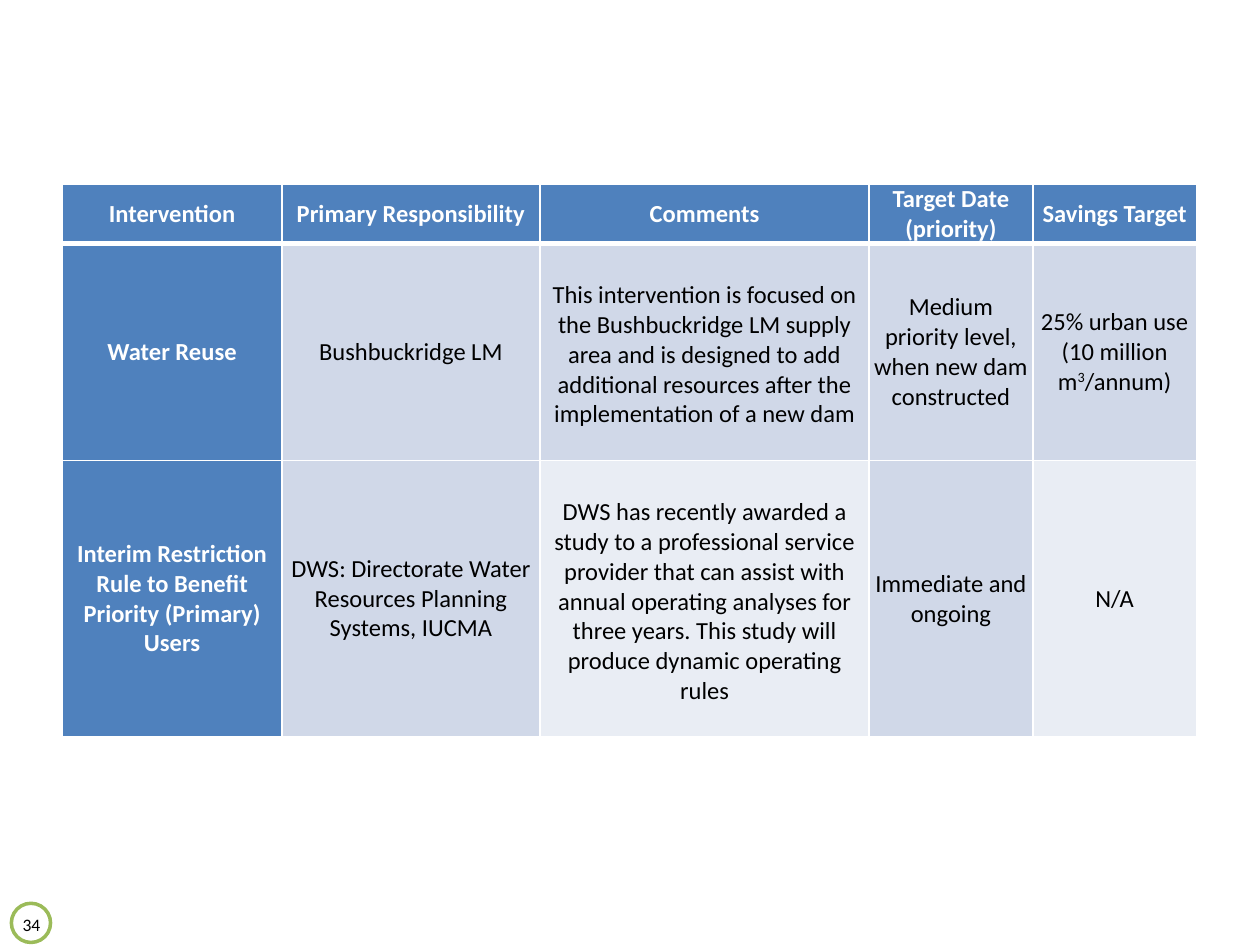
from lxml.etree import SubElement
from pptx import Presentation
from pptx.dml.color import RGBColor
from pptx.enum.shapes import MSO_SHAPE
from pptx.enum.text import MSO_ANCHOR, PP_ALIGN
from pptx.oxml.ns import qn
from pptx.util import Cm, Pt

COLORS = {
    "white": "FFFFFF",
    "black": "000000",
    "blue": "4F81BD",
    "band": "D0D8E8",
    "pale": "E9EDF4",
    "green": "9BBB59",
}
HEADER = {"size": Pt(14), "bold": True, "color": "white"}
BODY = {"size": Pt(14), "bold": False, "color": "black"}
NUMBER = {"size": Pt(10), "bold": False, "color": "black"}

COLS = [4.42, 5.21, 6.63, 3.3, 3.3]
ROWS = [1.2, 4.37, 5.58]
COMMENTS = 2

# A cell is a list of runs; a run starting with "^" is superscript
TABLE = [
    [["Intervention"], ["Primary Responsibility"], ["Comments"],
     ["Target Date (priority)"], ["Savings Target"]],
    [["Water Reuse"], ["Bushbuckridge LM"],
     ["This intervention is focused on the Bushbuckridge LM supply area and is "
      "designed to add additional resources after the implementation of a new dam"],
     ["Medium priority level, when new dam constructed"],
     ["25% urban use (10 million m", "^3", "/annum)"]],
    [["Interim Restriction Rule to Benefit Priority (Primary) Users"],
     ["DWS: Directorate Water Resources Planning Systems, IUCMA"],
     ["DWS has recently awarded a study to a professional service provider that "
      "can assist with annual operating analyses for three years. This study will "
      "produce dynamic operating rules"],
     ["Immediate and ongoing"], ["N/A"]],
]
FILLS = [
    ["blue"] * 5,
    ["blue"] + ["band"] * 4,
    ["blue", "band", "pale", "band", "pale"],
]


class SlideBuilder:
    font = "Calibri"

    def __init__(self, slide):
        self.s = slide

    def rgb(self, name):
        return RGBColor.from_string(COLORS[name])

    def add_runs(self, tf, runs, fmt):
        p = tf.paragraphs[0]
        p.alignment = PP_ALIGN.CENTER
        for text in runs:
            r = p.add_run()
            r.text = text.lstrip("^")
            r.font.name = self.font
            for key, value in fmt.items():
                if key == "color":
                    r.font.color.rgb = self.rgb(value)
                else:
                    setattr(r.font, key, value)
            if text.startswith("^"):
                r.font._element.set("baseline", "30000")

    def ellipse(self, x, y, w, h, fill, line, width):
        sp = self.s.shapes.add_shape(MSO_SHAPE.OVAL, Cm(x), Cm(y), Cm(w), Cm(h))
        sp.shadow.inherit = False
        sp.fill.solid()
        sp.fill.fore_color.rgb = self.rgb(fill)
        sp.line.color.rgb = self.rgb(line)
        sp.line.width = Pt(width)

    def text(self, x, y, w, h, text, fmt):
        tf = self.s.shapes.add_textbox(Cm(x), Cm(y), Cm(w), Cm(h)).text_frame
        insets = {"margin_left": 0, "margin_right": 0,
                  "margin_top": Cm(0.13), "margin_bottom": Cm(0.13)}
        for key, value in insets.items():
            setattr(tf, key, value)
        tf.word_wrap = True
        self.add_runs(tf, [text], fmt)

    def borders(self, cell, widths):
        tc_pr = cell._tc.get_or_add_tcPr()
        for i, (side, width) in enumerate(widths.items()):
            ln = SubElement(tc_pr, qn(f"a:ln{side}"), w=str(Pt(width)))
            tc_pr.insert(i, ln)  # borders come before the cell fill
            fill = SubElement(ln, qn("a:solidFill"))
            SubElement(fill, qn("a:srgbClr"), val=COLORS["white"])

    def cell(self, cell, runs, fill, fmt, top, widths):
        margins = {"margin_left": Cm(0.05), "margin_right": Cm(0.05),
                   "margin_top": Cm(top), "margin_bottom": 0}
        for key, value in margins.items():
            setattr(cell, key, value)
        cell.vertical_anchor = MSO_ANCHOR.MIDDLE
        cell.fill.solid()
        cell.fill.fore_color.rgb = self.rgb(fill)
        self.borders(cell, widths)
        self.add_runs(cell.text_frame, runs, fmt)

    def table(self, x, y, cols, rows, content, fills):
        table = self.s.shapes.add_table(len(rows), len(cols), Cm(x), Cm(y),
                                        Cm(sum(cols)), Cm(sum(rows))).table
        for col, width in zip(table.columns, cols):
            col.width = Cm(width)
        for row, height in zip(table.rows, rows):
            row.height = Cm(height)
        for i, row in enumerate(content):
            # The rule under the header row is thicker
            widths = {"L": 1, "R": 1, "T": 3 if i == 1 else 1, "B": 3 if i == 0 else 1}
            for j, runs in enumerate(row):
                fmt = HEADER if i == 0 or j == 0 else BODY
                top = 0.12 if i and j == COMMENTS else 0
                self.cell(table.cell(i, j), runs, fills[i][j], fmt, top, widths)


def main():
    prs = Presentation()
    prs.slide_width, prs.slide_height = Cm(25.4), Cm(19.05)
    b = SlideBuilder(prs.slides.add_slide(prs.slide_layouts[6]))

    # Page number badge
    b.ellipse(0.23, 18.21, 0.79, 0.79, "white", "green", 2)
    b.text(0.23, 18.29, 0.81, 0.51, "34", NUMBER)

    # Interventions table
    b.table(1.26, 3.71, COLS, ROWS, TABLE, FILLS)

    prs.save("out.pptx")


if __name__ == "__main__":
    main()
